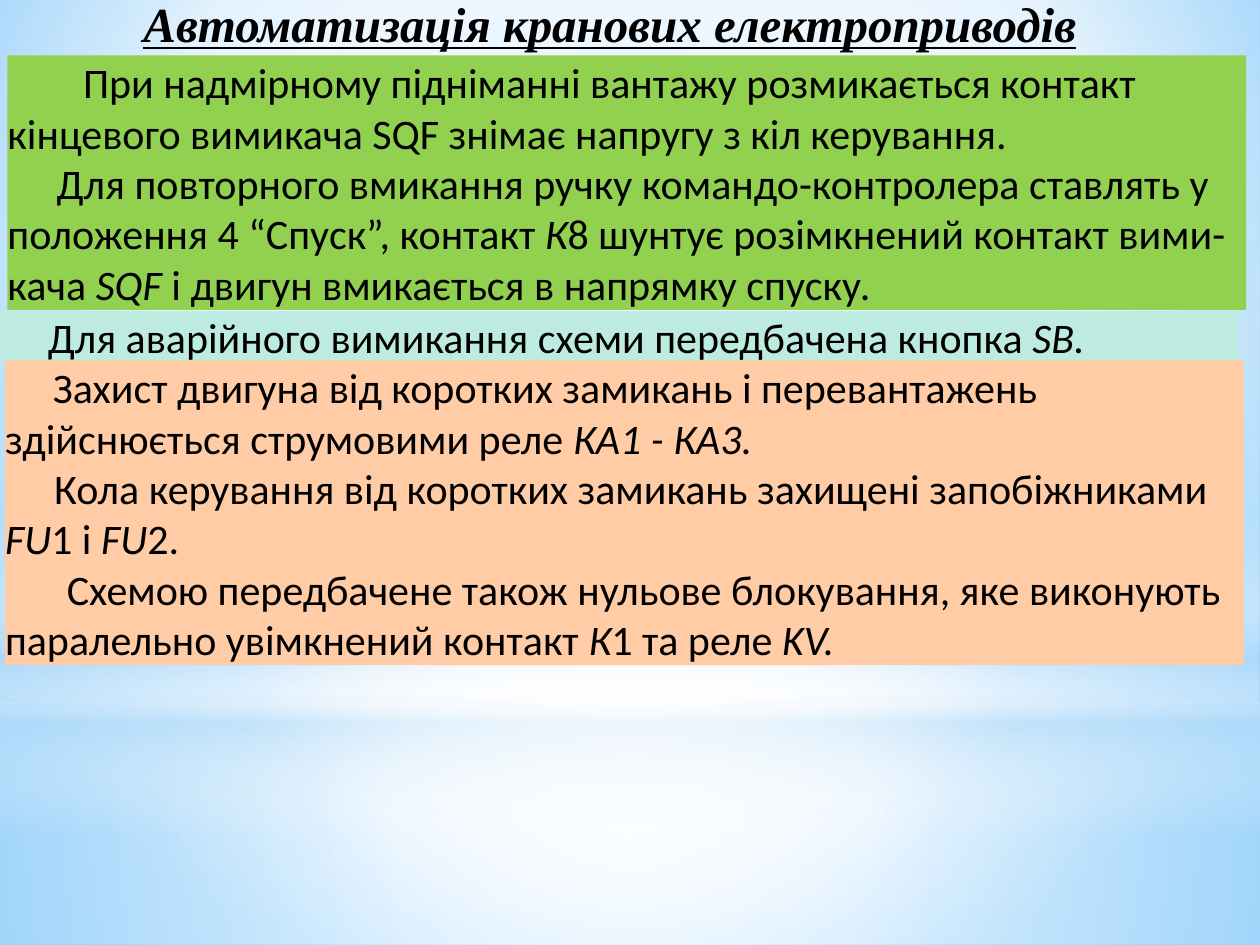
from lxml.etree import SubElement
from pptx import Presentation
from pptx.dml.color import RGBColor as Rgb
from pptx.enum.shapes import MSO_SHAPE as Geo
from pptx.enum.text import MSO_ANCHOR as Anchor, MSO_AUTO_SIZE as Fit, PP_ALIGN as Align
from pptx.oxml.ns import qn
from pptx.util import Inches, Pt

WIDE, HIGH = 10, 7.5
INK = {"text": "000000", "green": "92D050", "mint": "BEEBDF", "peach": "FFCCA6",
       "white": "FFFFFF", "haze": "B4DCFA", "sky": "9ED5FF", "blue": "5BB9FF"}

TITLE = "Автоматизація кранових електроприводів"

# Gradient stops: position %, colour, opacity %
BACK = [(0, "sky", 100), (60, "white", 100), (100, "blue", 100)]
MID = (50, 50, 50, 50)
# Glow layers: shape, top, height, stops, focus (None means top to bottom)
GLOWS = [
    (Geo.RECTANGLE, 5.58, 1.92,
     [(0, "white", 91), (37, "white", 76), (100, "haze", 79)], MID),
    (Geo.RECTANGLE, 0, 5.58,
     [(0, "white", 89), (48, "white", 62), (100, "haze", 79)], MID),
    (Geo.RECTANGLE, 4.12, 2.5,
     [(0, "white", 0), (29, "white", 30), (45, "haze", 40), (55, "white", 26),
      (65, "haze", 60), (100, "white", 0)], None),
    (Geo.OVAL, 1.75, 5.58, [(0, "white", 100), (56, "white", 0)], MID),
]

# Panels: colour, left, top, height, paragraphs.
# A paragraph is its first-line indent, then runs, every second one italic.
PANELS = [
    ("green", 0.06, 0.44, 2.02, [
        (0.6, ["При надмірному підніманні вантажу розмикається контакт "
               "кінцевого вимикача SQF знімає напругу з кіл керування."]),
        (0.39, ["Для повторного вмикання ручку командо-контролера ставлять у "
                "положення 4 “Спуск”, контакт ", "К",
                "8 шунтує розімкнений контакт вими-кача ", "SQF",
                " і двигун вмикається в напрямку спуску."]),
    ]),
    ("mint", 0, 2.47, 0.4, [
        (0.38, ["Для аварійного вимикання схеми передбачена кнопка ", "SB."]),
    ]),
    ("peach", 0.04, 2.86, 2.42, [
        (0.38, ["Захист двигуна від коротких замикань і перевантажень "
                "здійснюється струмовими реле ", "КА1 - КA3."]),
        (0.39, ["Кола керування від коротких замикань захищені запобіжниками ",
                "FU", "1 і ", "FU", "2."]),
        (0.49, ["Схемою передбачене також нульове блокування, яке виконують "
                "паралельно увімкнений контакт ", "К", "1 та реле ", "KV."]),
    ]),
]


def shade(props, stops, focus):
    """Swap the solid fill inside props for a gradient."""
    old = props.find(qn("a:solidFill"))
    grad = props.makeelement(qn("a:gradFill"), {"rotWithShape": "1"})
    props.replace(old, grad)
    chain = SubElement(grad, qn("a:gsLst"))
    for pos, name, solid in stops:
        stop = SubElement(chain, qn("a:gs"), pos=str(pos * 1000))
        tone = SubElement(stop, qn("a:srgbClr"), val=INK[name])
        if solid < 100:
            SubElement(tone, qn("a:alpha"), val=str(solid * 1000))
    if focus:
        way = SubElement(grad, qn("a:path"), path="circle")
        SubElement(way, qn("a:fillToRect"),
                   {side: str(part * 1000) for side, part in zip("ltrb", focus)})
    else:
        SubElement(grad, qn("a:lin"), ang="5400000", scaled="0")


def block(slide, geo, left, top, width, height, fill):
    box = slide.shapes.add_shape(geo, *map(Inches, (left, top, width, height)))
    box.shadow.inherit = False
    box.line.fill.background()
    box.fill.solid()
    box.fill.fore_color.rgb = Rgb.from_string(INK[fill])
    return box


def setup(frame, anchor):
    frame.word_wrap = True
    frame.auto_size = Fit.SHAPE_TO_FIT_TEXT
    frame.vertical_anchor = anchor
    frame.margin_left = frame.margin_right = 0
    frame.margin_top = frame.margin_bottom = 0


def write(para, text, face, size, italic):
    run = para.add_run()
    run.text = text
    font = run.font
    font.name, font.size, font.italic = face, Pt(size), italic
    font.color.rgb = Rgb.from_string(INK["text"])
    return font


def main():
    deck = Presentation()
    deck.slide_width, deck.slide_height = Inches(WIDE), Inches(HIGH)
    slide = deck.slides.add_slide(deck.slide_layouts[5])

    slide.background.fill.solid()
    shade(slide.element.find(".//" + qn("p:bgPr")), BACK, (20, 10, 20, 60))
    for geo, top, height, stops, focus in GLOWS:
        glow = block(slide, geo, 0, top, WIDE, height, "white")
        shade(glow.element.spPr, stops, focus)

    for fill, left, top, height, paras in PANELS:
        frame = block(slide, Geo.RECTANGLE, left, top, 9.83, height, fill).text_frame
        setup(frame, Anchor.MIDDLE)
        for i, (indent, runs) in enumerate(paras):
            para = frame.add_paragraph() if i else frame.paragraphs[0]
            para.alignment = Align.LEFT
            para._p.get_or_add_pPr().set("indent", str(Inches(indent)))
            for j, text in enumerate(runs):
                write(para, text, "Calibri", 24, j % 2 == 1)

    title = slide.shapes.title
    title.left, title.top, title.width, title.height = map(Inches, (0.59, 0.02, 8.5, 0.4))
    setup(title.text_frame, Anchor.TOP)
    para = title.text_frame.paragraphs[0]
    para.alignment, para.line_spacing = Align.CENTER, 0.85
    font = write(para, TITLE, "Times New Roman", 28, True)
    font.bold = font.underline = True
    title.element.getparent().append(title.element)  # bring to front

    deck.save("out.pptx")


if __name__ == "__main__":
    main()
